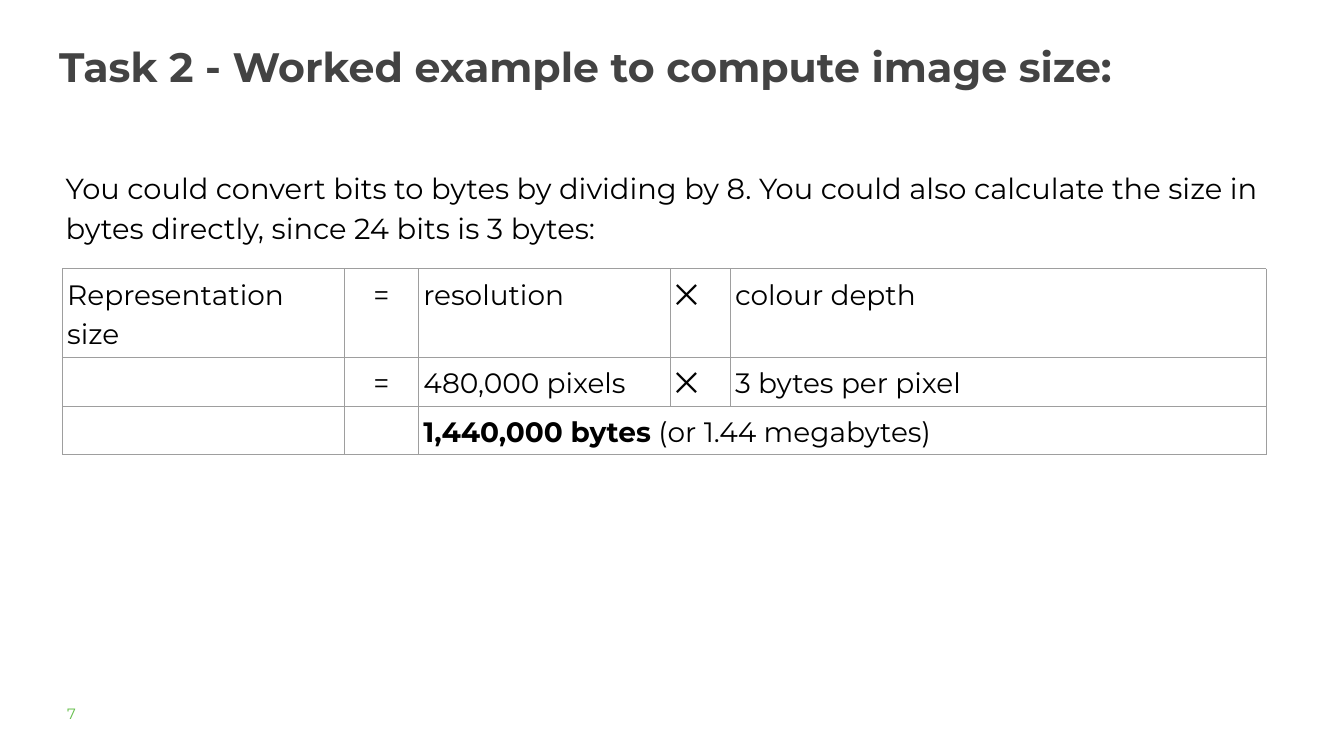
import pptx
import pptx.dml.color
import pptx.enum.text
import pptx.oxml
import pptx.oxml.ns
import pptx.util

EMU_PER_PX = 9144  # 100 px to the inch
FONT = "Montserrat"
LINE_SPACING = 1.15
CELL_INSET = 7

WHITE = pptx.dml.color.RGBColor(0xFF, 0xFF, 0xFF)
BLACK = pptx.dml.color.RGBColor(0x00, 0x00, 0x00)
DARK_GREY = pptx.dml.color.RGBColor(0x43, 0x43, 0x43)
BORDER_GREY = pptx.dml.color.RGBColor(0x9E, 0x9E, 0x9E)
GREEN = pptx.dml.color.RGBColor(0x65, 0xBE, 0x4B)

LEFT = pptx.enum.text.PP_ALIGN.LEFT
CENTER = pptx.enum.text.PP_ALIGN.CENTER
TOP = pptx.enum.text.MSO_ANCHOR.TOP

COLUMN_WIDTHS = [419, 111, 375, 89, 797]
ROW_HEIGHTS = [131, 73, 72]
EQUALS_COLUMN = 1
FORMULA_ROWS = [
    ["Representation size", "=", "resolution", "⨉", "colour depth"],
    ["", "=", "480,000 pixels", "⨉", "3 bytes per pixel"],
]
RESULT_RUNS = [("1,440,000 bytes", True), (" (or 1.44 megabytes)", False)]


def px(length):
    return pptx.util.Emu(length * EMU_PER_PX)


class SlideBuilder:
    """Holds the deck's style and the current slide."""

    def __init__(self, deck):
        self.slide = deck.slides.add_slide(deck.slide_layouts[5])
        self.slide.background.fill.solid()
        self.slide.background.fill.fore_color.rgb = WHITE

    def fill_frame(self, frame, runs, size, color, inset=0, spacing=LINE_SPACING):
        """Fills a text frame with one paragraph of (text, bold) runs."""
        frame.word_wrap = True
        frame.vertical_anchor = TOP
        frame.margin_left = frame.margin_right = px(inset)
        frame.margin_top = frame.margin_bottom = px(inset)
        self.add_runs(frame.paragraphs[0], runs, size, color, spacing=spacing)

    def add_runs(self, para, runs, size, color, align=LEFT, spacing=LINE_SPACING):
        para.alignment = align
        para.line_spacing = spacing
        for text, bold in runs:
            span = para.add_run()
            span.text = text
            span.font.name = FONT
            span.font.size = pptx.util.Pt(size)
            span.font.bold = bold
            span.font.color.rgb = color

    def title(self, left, top, width, height, runs):
        box = self.slide.shapes.title
        box.left, box.top, box.width, box.height = map(px, (left, top, width, height))
        box.text_frame.auto_size = pptx.enum.text.MSO_AUTO_SIZE.NONE
        self.fill_frame(box.text_frame, runs, 44, DARK_GREY)

    def text(self, left, top, width, height, text, size, color, **style):
        box = self.slide.shapes.add_textbox(*map(px, (left, top, width, height)))
        self.fill_frame(box.text_frame, [(text, False)], size, color, **style)

    def table(self, left, top, widths, heights):
        """Adds a plain ruled table and returns it for filling."""
        frame = self.slide.shapes.add_table(
            len(heights), len(widths), px(left), px(top), px(sum(widths)), px(sum(heights)))
        table = frame.table
        table.first_row = table.horz_banding = False
        for column, width in zip(table.columns, widths):
            column.width = px(width)
        for row, height in zip(table.rows, heights):
            row.height = px(height)
        for cell in table.iter_cells():
            cell.margin_left = cell.margin_right = px(CELL_INSET)
            cell.margin_top = cell.margin_bottom = px(CELL_INSET)
            self.rule(cell)
            cell.fill.background()
        return table

    def rule(self, cell):
        """Draws a thin line on all four sides of a cell."""
        properties = cell._tc.get_or_add_tcPr()
        for side in ("lnL", "lnR", "lnT", "lnB"):
            properties.append(pptx.oxml.parse_xml(
                f'<a:{side} {pptx.oxml.ns.nsdecls("a")} w="{int(pptx.util.Pt(0.75))}">'
                f'<a:solidFill><a:srgbClr val="{BORDER_GREY}"/></a:solidFill></a:{side}>'))

    def cell(self, cell, runs, align=LEFT):
        self.add_runs(cell.text_frame.paragraphs[0], runs, 30, BLACK, align)


def main():
    deck = pptx.Presentation()
    deck.slide_width, deck.slide_height = px(2000), px(1125)
    page = SlideBuilder(deck)

    page.title(88, 51, 1800, 178, [
        ("Task 2 - ", True), ("Worked example to compute image size:", True)])
    page.text(100, 1048, 157, 39, "7", 16, GREEN, spacing=1.0)
    page.text(88, 236, 1823, 158,
              "You could convert bits to bytes by dividing by 8. You could also "
              "calculate the size in bytes directly, since 24 bits is 3 bytes:",
              31, BLACK, inset=10)

    table = page.table(93, 400, COLUMN_WIDTHS, ROW_HEIGHTS)
    for row, texts in enumerate(FORMULA_ROWS):
        for column, text in enumerate(texts):
            if text:
                align = CENTER if column == EQUALS_COLUMN else LEFT
                page.cell(table.cell(row, column), [(text, False)], align)
    result = table.cell(2, 2)
    result.merge(table.cell(2, 4))
    page.cell(result, RESULT_RUNS)

    deck.save("out.pptx")


if __name__ == "__main__":
    main()
